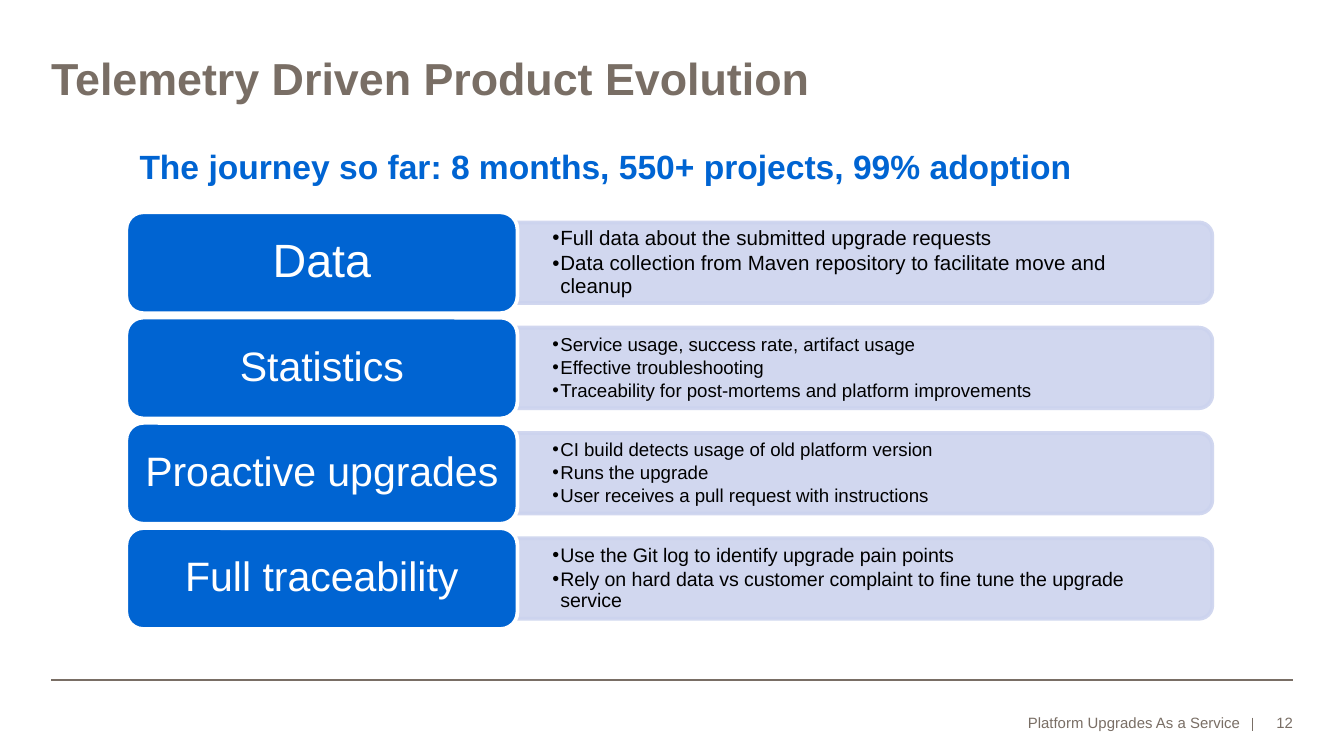
from dataclasses import dataclass

from lxml.etree import SubElement
from pptx import Presentation
from pptx.dml.color import RGBColor
from pptx.enum.shapes import MSO_CONNECTOR, MSO_SHAPE
from pptx.enum.text import MSO_ANCHOR, PP_ALIGN
from pptx.oxml.ns import qn
from pptx.util import Inches, Pt


@dataclass(frozen=True)
class Theme:
    font: str = "Arial"
    grey: str = "796E65"
    blue: str = "0064D2"
    pale: str = "CCD3EE"
    white: str = "FFFFFF"
    black: str = "000000"
    title: float = 24
    subtitle: float = 18
    footer: float = 8


THEME = Theme()

ROWS = [
    ("Data", 25, 11, [
        "Full data about the submitted upgrade requests",
        "Data collection from Maven repository to facilitate move and cleanup",
    ]),
    ("Statistics", 22, 10, [
        "Service usage, success rate, artifact usage",
        "Effective troubleshooting",
        "Traceability for post-mortems and platform improvements",
    ]),
    ("Proactive upgrades", 22, 10, [
        "CI build detects usage of old platform version",
        "Runs the upgrade",
        "User receives a pull request with instructions",
    ]),
    ("Full traceability", 22, 10.5, [
        "Use the Git log to identify upgrade pain points",
        "Rely on hard data vs customer complaint to fine tune the upgrade service",
    ]),
]


def add_run(p, text, size, color, bold=False):
    r = p.add_run()
    r.text = text
    r.font.name = THEME.font
    r.font.size = Pt(size)
    r.font.bold = bold
    r.font.color.rgb = RGBColor.from_string(color)


def set_frame(tf, anchor, left=0.0, top=0.0, right=0.0, bottom=0.0):
    tf.word_wrap = True
    tf.vertical_anchor = anchor
    tf.margin_left, tf.margin_right = Inches(left), Inches(right)
    tf.margin_top, tf.margin_bottom = Inches(top), Inches(bottom)


def add_text_box(s, x, y, w, h):
    return s.shapes.add_textbox(Inches(x), Inches(y), Inches(w), Inches(h)).text_frame


def add_filled(s, kind, x, y, w, h, fill, line):
    sp = s.shapes.add_shape(kind, Inches(x), Inches(y), Inches(w), Inches(h))
    sp.shadow.inherit = False
    sp.fill.solid()
    sp.fill.fore_color.rgb = RGBColor.from_string(fill)
    sp.line.color.rgb = RGBColor.from_string(line)
    sp.line.width = Pt(2)
    return sp


def add_rule(s, x1, y1, x2, y2):
    line = s.shapes.add_connector(
        MSO_CONNECTOR.STRAIGHT, Inches(x1), Inches(y1), Inches(x2), Inches(y2))
    line.line.color.rgb = RGBColor.from_string(THEME.grey)
    line.line.width = Pt(1)
    SubElement(line._element.spPr, qn("a:effectLst"))


def add_bullet(p):
    pPr = p._p.get_or_add_pPr()
    pPr.set("lvl", "1")
    pPr.set("marL", str(Inches(0.06)))
    pPr.set("indent", str(Inches(-0.06)))
    SubElement(pPr, qn("a:buFont")).set("typeface", THEME.font)
    SubElement(pPr, qn("a:buChar")).set("char", "•")


def add_heading(s, x, y, w, h):
    title = s.shapes.title
    title.left, title.top = Inches(x), Inches(y)
    title.width, title.height = Inches(w), Inches(h)
    tf = title.text_frame
    set_frame(tf, MSO_ANCHOR.TOP)
    p = tf.paragraphs[0]
    p.alignment = PP_ALIGN.LEFT
    add_run(p, "Telemetry Driven Product Evolution", THEME.title, THEME.grey, True)

    tf = add_text_box(s, x + 0.56, y + 0.66, w - 0.9, 0.4)
    set_frame(tf, MSO_ANCHOR.TOP, 0.1, 0.05, 0.1, 0.05)
    add_run(tf.paragraphs[0], "The journey so far: 8 months, 550+ projects, 99% adoption",
            THEME.subtitle, THEME.blue, True)


def add_panel(s, x, y, w, h, size, points):
    sp = add_filled(s, MSO_SHAPE.ROUND_2_SAME_RECTANGLE,
                    x + (w - h) / 2, y + (h - w) / 2, h, w, THEME.pale, THEME.pale)
    sp.rotation = 90
    for color in sp._element.spPr.iter(qn("a:srgbClr")):
        SubElement(color, qn("a:alpha")).set("val", "90000")

    tf = add_text_box(s, x - 0.01, y + 0.03, w - 0.03, h - 0.06)
    set_frame(tf, MSO_ANCHOR.MIDDLE, 0.27, 0.14, 0.27, 0.14)
    for i, point in enumerate(points):
        p = tf.add_paragraph() if i else tf.paragraphs[0]
        add_bullet(p)
        p.line_spacing = 0.9
        p.space_after = Pt(size * 0.15)
        add_run(p, point, size, THEME.black)


def add_tile(s, x, y, w, h, label, size):
    sp = add_filled(s, MSO_SHAPE.ROUNDED_RECTANGLE, x, y, w, h, THEME.blue, THEME.white)
    tf = sp.text_frame
    set_frame(tf, MSO_ANCHOR.MIDDLE, 0.08, 0.05, 0.08, 0.05)
    p = tf.paragraphs[0]
    p.alignment = PP_ALIGN.CENTER
    p.line_spacing = 0.9
    add_run(p, label, size, THEME.white)


def add_practices(s, x, y, w, h):
    tile_w, tile_h, panel_h = 2.91, 0.75, 0.6
    pitch = (h - tile_h) / (len(ROWS) - 1)
    for i, (label, label_size, point_size, points) in enumerate(ROWS):
        top = y + i * pitch
        add_panel(s, x + tile_w, top + (tile_h - panel_h) / 2,
                  w - tile_w, panel_h, point_size, points)
        add_tile(s, x, top, tile_w, tile_h, label, label_size)


def add_footer(s, x, y, w):
    add_rule(s, x, y, x + w, y)
    add_rule(s, x + w - 0.3, y + 0.28, x + w - 0.3, y + 0.38)
    for text, right, width in (("Platform Upgrades As a Service", 0.39, 3.66),
                               ("12", 0, 0.3)):
        tf = add_text_box(s, x + w - right - width, y + 0.17, width, 0.21)
        set_frame(tf, MSO_ANCHOR.BOTTOM, top=0.05)
        p = tf.paragraphs[0]
        p.alignment = PP_ALIGN.RIGHT
        add_run(p, text, THEME.footer, THEME.grey)


def main():
    prs = Presentation()
    prs.slide_width = Inches(10)
    prs.slide_height = prs.slide_width * 9 // 16
    s = prs.slides.add_slide(prs.slide_layouts[5])
    add_heading(s, 0.38, 0.38, 9.24, 0.76)
    add_practices(s, 0.94, 1.58, 8.08, 3.1)
    add_footer(s, 0.38, 5.06, 9.24)
    prs.save("out.pptx")


if __name__ == "__main__":
    main()
